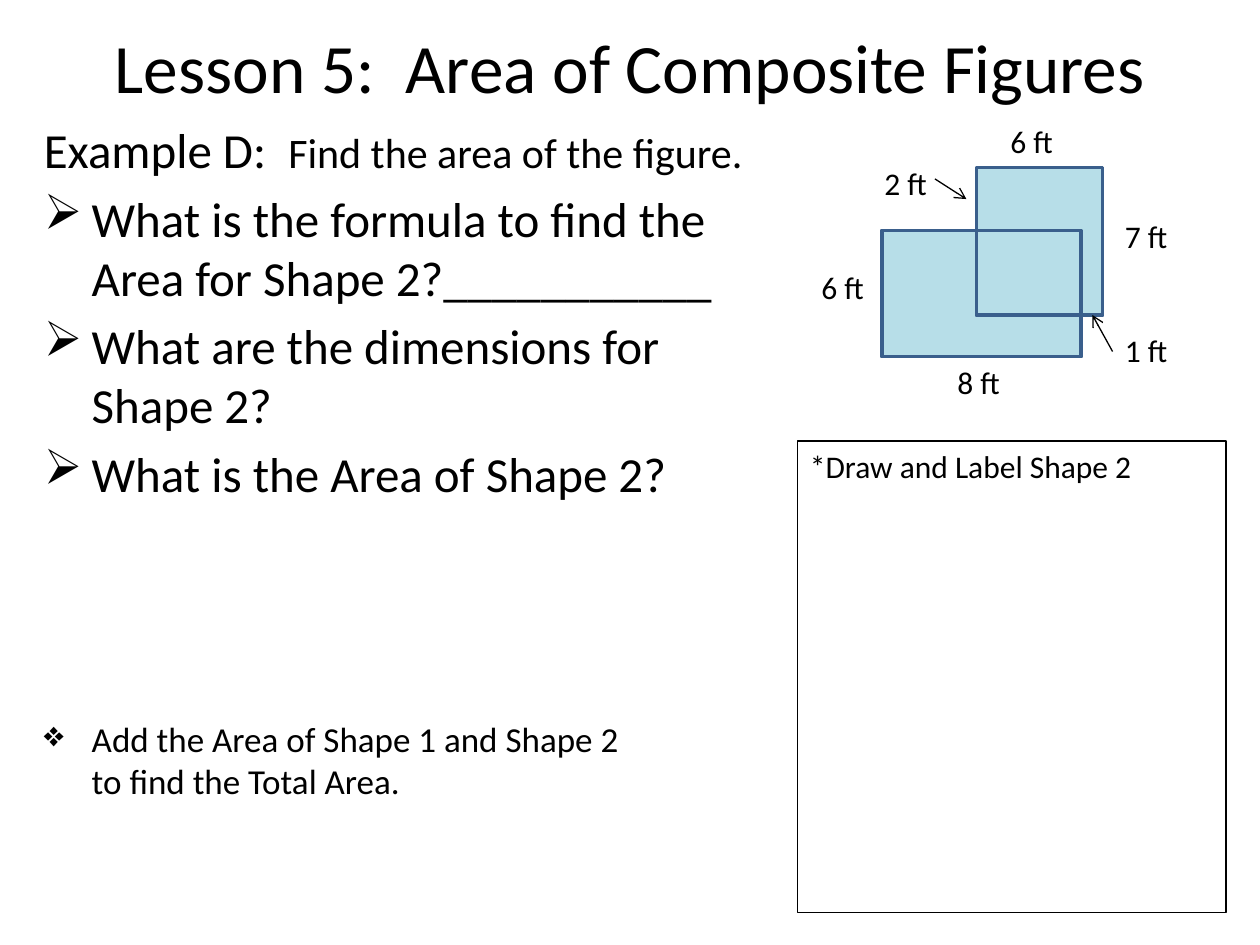
from lxml import etree
from pptx import Presentation
from pptx import util as u
from pptx.dml.color import RGBColor
from pptx.enum import shapes, text
from pptx.oxml.ns import qn

THEME = {
    "font": "Calibri",
    "ink": RGBColor.from_string("000000"),
    "figure_fill": RGBColor.from_string("B7DEE8"),
    "figure_line": RGBColor.from_string("3A5F8C"),
    "title": 39.6, "question": 28, "task": 24, "hint": 20, "label": 18,
}


def add_text(paragraph, words, size):
    run = paragraph.add_run()
    run.text = words
    style = {"name": THEME["font"], "size": u.Pt(THEME[size])}
    for key, value in style.items():
        setattr(run.font, key, value)
    run.font.color.rgb = THEME["ink"]


def add_rectangle(parent, box, line, width, fill=None):
    rectangle = parent.add_shape(shapes.MSO_SHAPE.RECTANGLE, *map(u.Inches, box))
    rectangle.shadow.inherit = False
    if fill is None:
        rectangle.fill.background()
    else:
        rectangle.fill.solid()
        rectangle.fill.fore_color.rgb = fill
    rectangle.line.color.rgb = line
    rectangle.line.width = u.Pt(width)
    return rectangle


deck = Presentation()
deck.slide_width, deck.slide_height = u.Inches(10), u.Inches(7.5)
slide = deck.slides.add_slide(deck.slide_layouts[5])

# Title
title = slide.shapes.title
title_box = {"left": 0.5, "top": 0.17, "width": 9, "height": 0.7}
for key, value in title_box.items():
    setattr(title, key, u.Inches(value))
title.text_frame.auto_size = text.MSO_AUTO_SIZE.NONE
title.text_frame.vertical_anchor = text.MSO_ANCHOR.MIDDLE
title.text_frame.paragraphs[0].alignment = text.PP_ALIGN.CENTER
add_text(title.text_frame.paragraphs[0], "Lesson 5:  Area of Composite Figures", "title")

# Example and its questions: bullet, points before, size, lines
questions = slide.shapes.add_textbox(*map(u.Inches, (0.25, 0.9, 5.83, 6.52))).text_frame
questions.word_wrap = True
example = questions.paragraphs[0]
example.space_before = u.Pt(5.6)
add_text(example, "Example D:  ", "question")
add_text(example, "Find the area of the figure.", "task")

steps = [
    ("➢", 5.6, "question", ["What is the formula to find the Area for Shape 2?___________"]),
    ("➢", 5.6, "question", ["What are the dimensions for Shape 2?"]),
    ("➢", 5.6, "question", ["What is the Area of Shape 2?"]),
    ("❖", 123, "hint", ["Add the Area of Shape 1 and Shape 2", "to find the Total Area."]),
]
for bullet, before, size, lines in steps:
    step = questions.add_paragraph()
    step.space_before = u.Pt(before)
    for number, words in enumerate(lines):
        if number:
            step.add_line_break()
        add_text(step, words, size)
    properties = step._p.get_or_add_pPr()
    properties.set("marL", str(u.Inches(0.38)))
    properties.set("indent", str(u.Inches(-0.38)))
    etree.SubElement(properties, qn("a:buChar")).set("char", bullet)

# Drawing area
drawing_area = add_rectangle(slide.shapes, (6.33, 3.5, 3.4, 3.74), THEME["ink"], 0.75)
drawing_area.text_frame.vertical_anchor = text.MSO_ANCHOR.TOP
instruction = drawing_area.text_frame.paragraphs[0]
instruction.alignment = text.PP_ALIGN.LEFT
add_text(instruction, "*Draw and Label Shape 2", "label")

# Composite figure: filled shapes, then their outlines on top
figure = slide.shapes.add_group_shape().shapes
wide, tall = (7, 1.83, 1.58, 1), (7.75, 1.33, 1, 1.17)
for box, fill in [(wide, THEME["figure_fill"]), (tall, THEME["figure_fill"]),
                  (tall, None), (wide, None)]:
    add_rectangle(figure, box, THEME["figure_line"], 2, fill)

# Side lengths
lengths = [
    ("6 ft", 6.42, 2.08), ("8 ft", 7.5, 2.83), ("6 ft", 7.92, 0.92),
    ("7 ft", 8.83, 1.67), ("1 ft", 8.83, 2.58), ("2 ft", 6.92, 1.25),
]
for words, left, top in lengths:
    length = figure.add_textbox(*map(u.Inches, (left, top, 0.67, 0.42))).text_frame
    length.word_wrap = True
    add_text(length.paragraphs[0], words, "label")

# Arrows to the short sides
for ends in [(8.83, 2.79, 8.67, 2.5), (7.42, 1.42, 7.67, 1.58)]:
    arrow = figure.add_connector(shapes.MSO_CONNECTOR.STRAIGHT, *map(u.Inches, ends))
    arrow.line.color.rgb = THEME["ink"]
    arrow.line.width = u.Pt(0.75)
    etree.SubElement(arrow.line._get_or_add_ln(), qn("a:tailEnd")).set("type", "arrow")
    etree.SubElement(arrow._element.spPr, qn("a:effectLst"))

deck.save("out.pptx")
